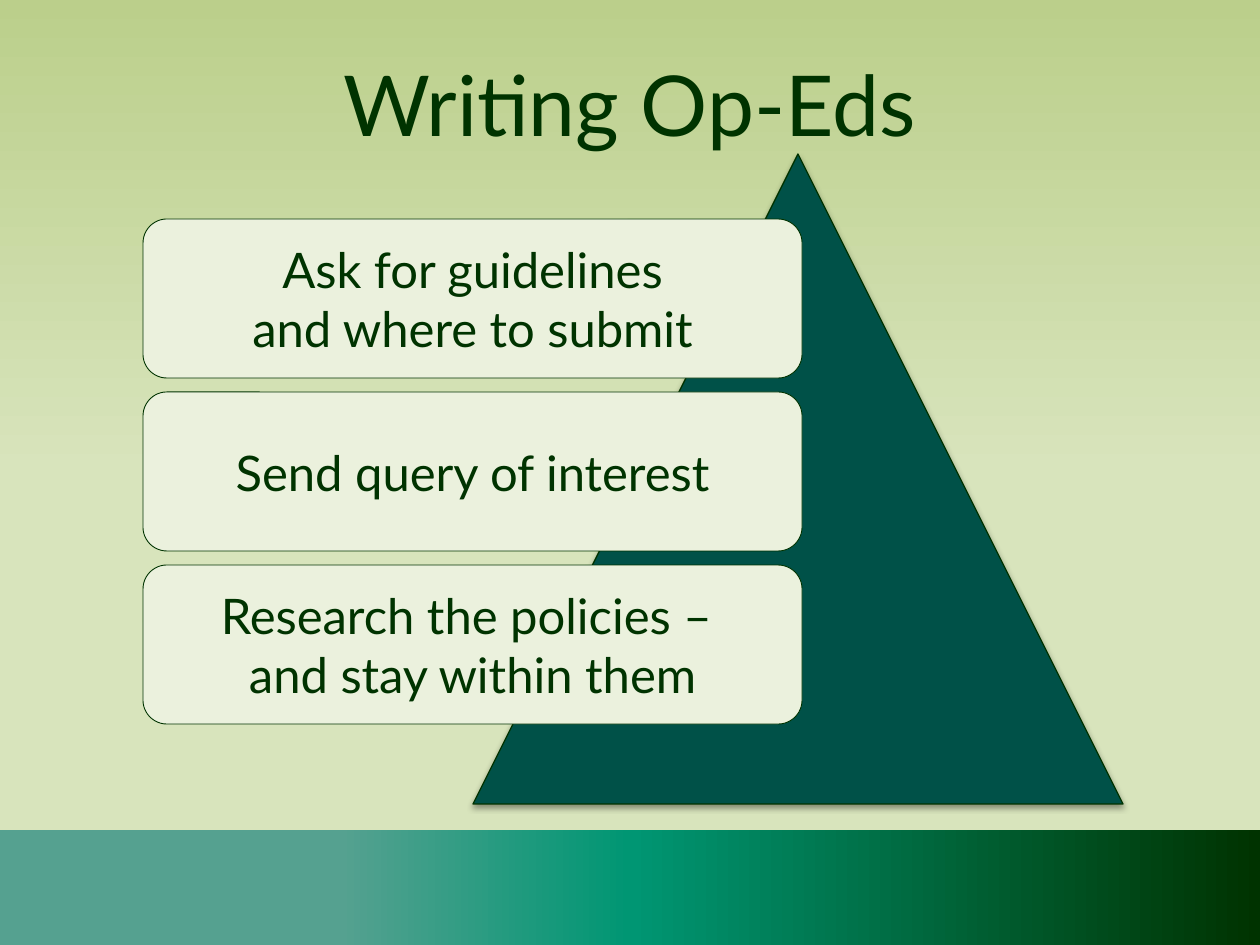
from dataclasses import dataclass

from lxml import etree
from pptx import Presentation
from pptx import util as u
from pptx.dml.color import RGBColor
from pptx.enum import shapes, text
from pptx.oxml import parse_xml
from pptx.oxml.ns import nsdecls, qn

EMU_PER_PX = 914400 / 126


@dataclass(frozen=True)
class Theme:
    ink: str = "003300"
    triangle: str = "005148"
    card: str = "EBF1DD"
    sky: tuple = ((0, "BBCF8B"), (50, "D8E4BC"), (100, "D8E4BC"))
    band: tuple = ((27, "55A190"), (50, "009673"), (100, "003300"))
    font: str = "Lato"
    title_size: int = 48
    card_size: int = 28


THEME = Theme()
CARDS = (
    ("Ask for guidelines", "and where to submit"),
    ("Send query of interest",),
    ("Research the policies – ", "and stay within them"),
)
CARD_TOP, CARD_HEIGHT, CARD_STEP = 219, 159, 173


def px(count):
    return u.Emu(round(count * EMU_PER_PX))


def set_gradient(fill, element, stops, angle):
    """Fill with colour stops; angle is counter-clockwise, as python-pptx counts."""
    fill.gradient()
    fill.gradient_angle = angle
    stop_list = next(element.iter(qn("a:gsLst")))
    for stop in list(stop_list):
        stop_list.remove(stop)
    for position, color in stops:
        stop = etree.SubElement(stop_list, qn("a:gs"), pos=str(position * 1000))
        etree.SubElement(stop, qn("a:srgbClr"), val=color)


def add_shape(page, kind, left, top, width, height):
    shape = page.shapes.add_shape(kind, px(left), px(top), px(width), px(height))
    shape.shadow.inherit = False
    return shape


def set_solid(shape, color, line_width):
    shape.fill.solid()
    shape.fill.fore_color.rgb = RGBColor.from_string(color)
    shape.line.color.rgb = RGBColor.from_string(THEME.ink)
    shape.line.width = u.Pt(line_width)


def write_lines(frame, lines, size):
    frame.word_wrap = True
    frame.auto_size = text.MSO_AUTO_SIZE.NONE
    frame.vertical_anchor = text.MSO_ANCHOR.MIDDLE
    for index, line in enumerate(lines):
        para = frame.add_paragraph() if index else frame.paragraphs[0]
        para.alignment = text.PP_ALIGN.CENTER
        span = para.add_run()
        span.text = line
        span.font.name = THEME.font
        span.font.size = u.Pt(size)
        span.font.color.rgb = RGBColor.from_string(THEME.ink)


def add_band(page):
    band = add_shape(page, shapes.MSO_SHAPE.RECTANGLE, 0, 830, 1260, 115)
    set_gradient(band.fill, band.element, THEME.band, 0)
    band.line.fill.background()


def add_title(page, wording):
    title = page.shapes.title
    title.left, title.top, title.width, title.height = map(px, (49, 24, 1161, 157))
    write_lines(title.text_frame, [wording], THEME.title_size)


def add_triangle(page):
    triangle = add_shape(page, shapes.MSO_SHAPE.ISOSCELES_TRIANGLE, 473, 154, 650, 650)
    set_solid(triangle, THEME.triangle, 0.75)
    effects = next(triangle.element.iter(qn("a:effectLst")))
    effects.append(parse_xml(
        f'<a:outerShdw {nsdecls("a")} blurRad="{u.Pt(3.1)}" dist="{u.Pt(2)}" '
        'dir="5400000" rotWithShape="0"><a:srgbClr val="000000">'
        '<a:alpha val="38000"/></a:srgbClr></a:outerShdw>'))


def add_card(page, top, lines):
    card = add_shape(page, shapes.MSO_SHAPE.ROUNDED_RECTANGLE, 143, top, 659, CARD_HEIGHT)
    card.adjustments[0] = 0.15
    set_solid(card, THEME.card, 0.5)
    frame = card.text_frame
    frame.margin_left = frame.margin_right = px(23)
    frame.margin_top = frame.margin_bottom = px(16)
    write_lines(frame, lines, THEME.card_size)


def main():
    deck = Presentation()
    deck.slide_width, deck.slide_height = px(1260), px(945)
    page = deck.slides.add_slide(deck.slide_layouts.get_by_name("Title Only"))
    set_gradient(page.background.fill, page.element, THEME.sky, 270)
    add_band(page)
    add_title(page, "Writing Op-Eds")
    add_triangle(page)
    for row, lines in enumerate(CARDS):
        add_card(page, CARD_TOP + row * CARD_STEP, lines)
    deck.save("out.pptx")


if __name__ == "__main__":
    main()
